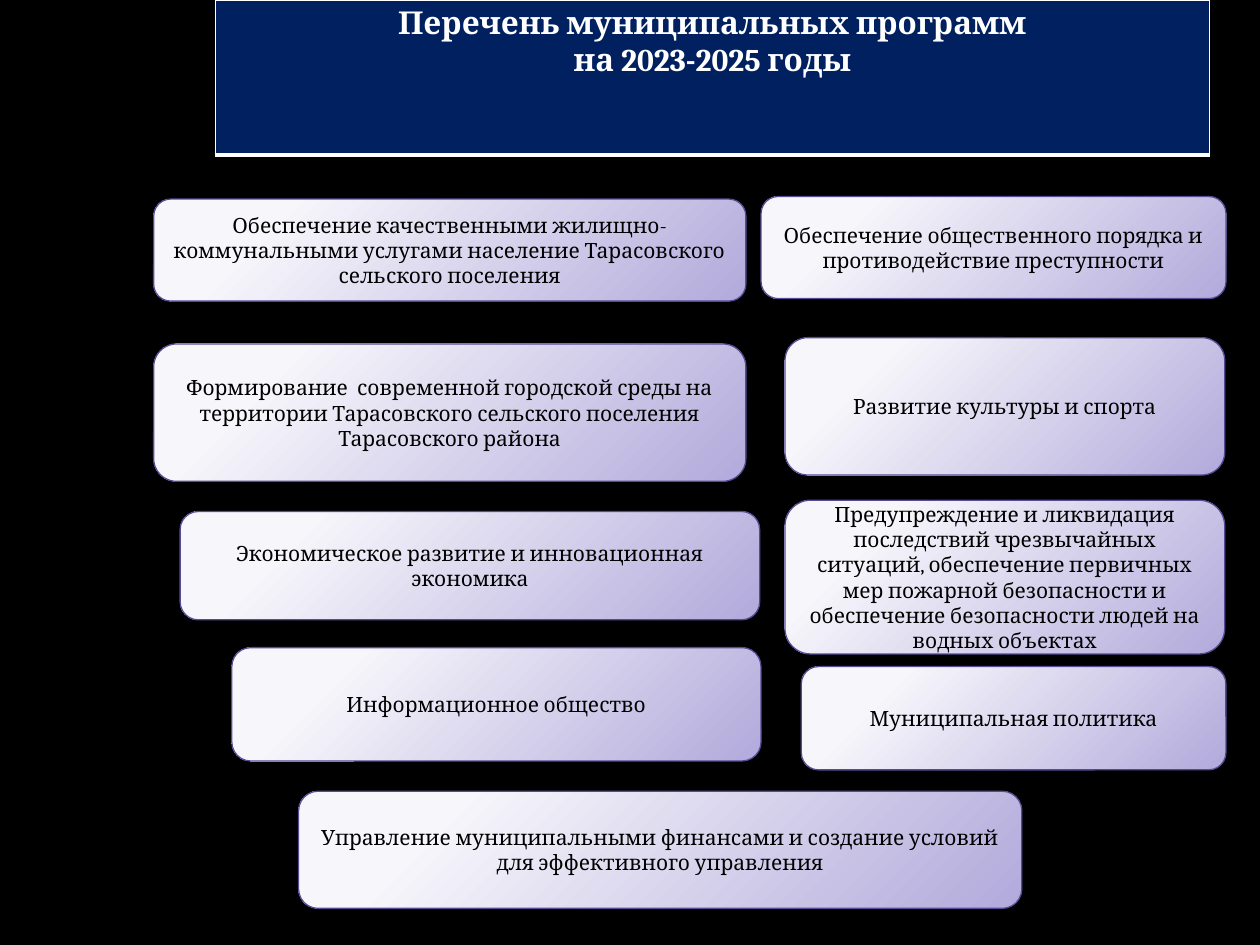
import dataclasses

import pptx
import pptx.dml.color
import pptx.enum.shapes
import pptx.enum.text
import pptx.oxml
import pptx.oxml.ns
import pptx.util

Inches = pptx.util.Inches


@dataclasses.dataclass(frozen=True)
class Theme:
    font: str = "Cambria"
    title_size: int = 18
    body_size: int = 12
    background: str = "000000"
    banner: str = "002060"
    banner_text: str = "FFFFFF"
    card_light: str = "F7F6FB"
    card_dark: str = "B2AADB"
    card_line: str = "5A4A96"
    card_text: str = "000000"


def rgb(value):
    return pptx.dml.color.RGBColor.from_string(value)


def xml(markup):
    """Build an element whose opening tag holds {ns} for the drawing namespace."""
    return pptx.oxml.parse_xml(markup.replace("{ns}", pptx.oxml.ns.nsdecls("a")))


class SlideBuilder:
    """Draws themed elements on one slide."""

    def __init__(self, slide, theme):
        self.slide = slide
        self.theme = theme
        fill = slide.background.fill
        fill.solid()
        fill.fore_color.rgb = rgb(theme.background)

    def set_text(self, text_frame, text, size, color, bold=False):
        text_frame.text = text
        text_frame.word_wrap = True
        for paragraph in text_frame.paragraphs:
            paragraph.alignment = pptx.enum.text.PP_ALIGN.CENTER
            for run in paragraph.runs:
                run.font.name = self.theme.font
                run.font.size = pptx.util.Pt(size)
                run.font.bold = bold
                run.font.color.rgb = rgb(color)

    def banner(self, text, left, top, width, height):
        """Add the heading as a one-cell table with a heavy lower border."""
        box = [Inches(length) for length in (left, top, width, height)]
        table = self.slide.shapes.add_table(1, 1, *box).table
        table.first_row = False
        table.horz_banding = False
        cell = table.cell(0, 0)
        cell_properties = cell._tc.get_or_add_tcPr()
        for side, points in (("L", 1), ("R", 1), ("T", 1), ("B", 3)):
            cell_properties.append(xml(
                f'<a:ln{side} {{ns}} w="{pptx.util.Pt(points)}"><a:solidFill>'
                f'<a:srgbClr val="{self.theme.banner_text}"/>'
                f'</a:solidFill></a:ln{side}>'))
        cell.fill.solid()
        cell.fill.fore_color.rgb = rgb(self.theme.banner)
        self.set_text(cell.text_frame, text, self.theme.title_size,
                      self.theme.banner_text, bold=True)

    def card(self, text, left, top, width, height):
        box = [Inches(length) for length in (left, top, width, height)]
        shape = self.slide.shapes.add_shape(
            pptx.enum.shapes.MSO_SHAPE.ROUNDED_RECTANGLE, *box)
        shape.shadow.inherit = False
        shape.line.color.rgb = rgb(self.theme.card_line)
        shape.line.width = pptx.util.Pt(0.75)
        self.radial_fill(shape)
        shape.text_frame.vertical_anchor = pptx.enum.text.MSO_ANCHOR.MIDDLE
        self.set_text(shape.text_frame, text, self.theme.body_size,
                      self.theme.card_text)

    def radial_fill(self, shape):
        """Fill with a circular gradient centred beyond the top left corner."""
        shape.fill.gradient()
        stops = ((0.2, self.theme.card_light), (1, self.theme.card_dark))
        for stop, (position, color) in zip(shape.fill.gradient_stops, stops):
            stop.position = position
            stop.color.rgb = rgb(color)
        linear = shape._element.spPr.find(".//" + pptx.oxml.ns.qn("a:lin"))
        linear.getparent().replace(linear, xml(
            '<a:path {ns} path="circle"><a:fillToRect l="-15000" t="-15000" '
            'r="115000" b="115000"/></a:path>'))


PROGRAMS = (
    ("Обеспечение качественными жилищно-коммунальными услугами население "
     "Тарасовского сельского поселения", 1.22, 1.58, 4.7, 0.81),
    ("Обеспечение общественного порядка и противодействие преступности",
     6.04, 1.56, 3.69, 0.81),
    ("Развитие культуры и спорта", 6.23, 2.68, 3.49, 1.09),
    ("Предупреждение и ликвидация последствий чрезвычайных ситуаций, "
     "обеспечение первичных мер пожарной безопасности и обеспечение "
     "безопасности людей на водных объектах", 6.23, 3.97, 3.49, 1.22),
    ("Формирование  современной городской среды на территории Тарасовского "
     "сельского поселения Тарасовского района", 1.22, 2.73, 4.7, 1.09),
    ("Экономическое развитие и инновационная экономика",
     1.43, 4.06, 4.6, 0.86),
    ("Информационное общество", 1.84, 5.14, 4.2, 0.9),
    ("Муниципальная политика", 6.36, 5.29, 3.37, 0.82),
    ("Управление муниципальными финансами и создание условий для "
     "эффективного управления", 2.37, 6.28, 5.74, 0.93),
)


def main():
    presentation = pptx.Presentation()
    presentation.slide_width = Inches(10)
    presentation.slide_height = Inches(7.5)
    blank_layout = presentation.slide_layouts[6]
    builder = SlideBuilder(presentation.slides.add_slide(blank_layout), Theme())
    builder.banner("Перечень муниципальных программ\nна 2023-2025 годы",
                   1.71, 0, 7.89, 1.23)
    for program in PROGRAMS:
        builder.card(*program)
    presentation.save("out.pptx")


if __name__ == "__main__":
    main()
